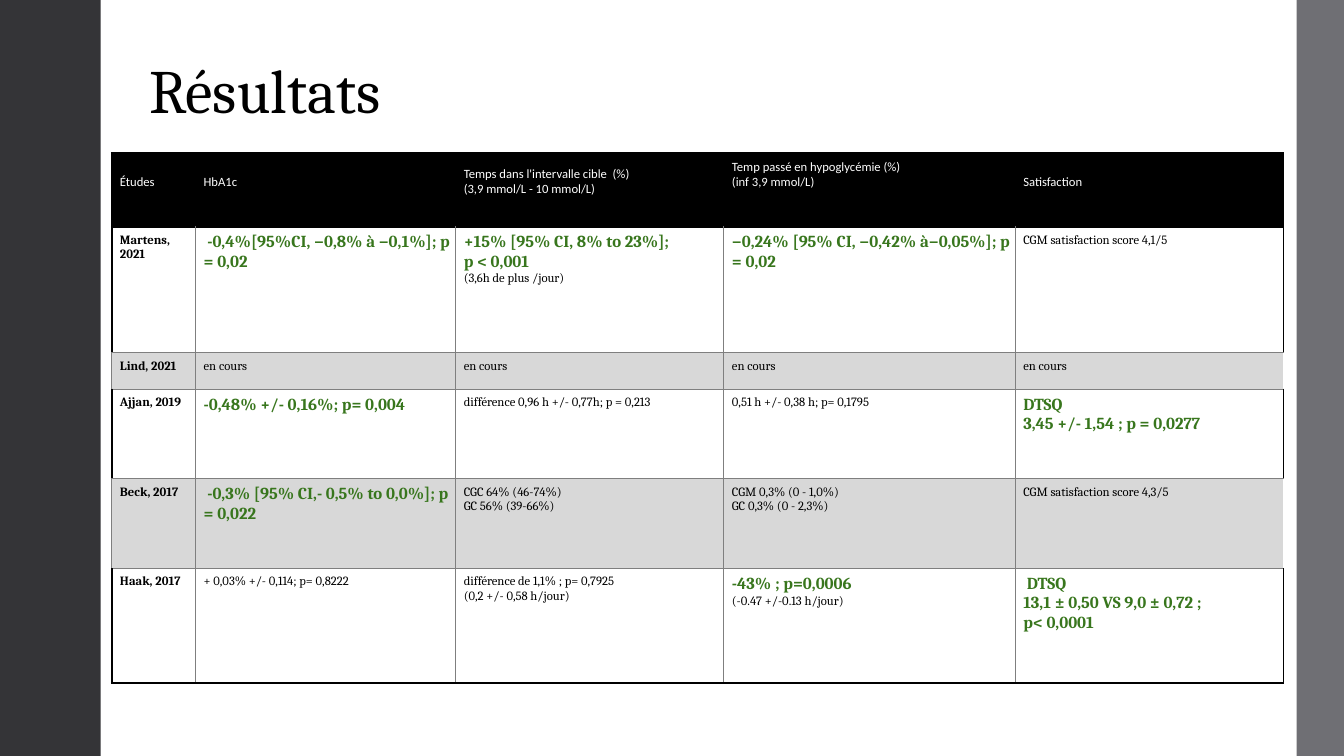
import dataclasses

import lxml.etree
import pptx
import pptx.dml.color
import pptx.enum.shapes
import pptx.enum.text
import pptx.oxml.ns
import pptx.util


@dataclasses.dataclass(frozen=True)
class Theme:
    """Colours, fonts and type sizes of the slide."""
    black: str = "000000"
    white: str = "FFFFFF"
    dark: str = "343437"
    grey: str = "6F6F74"
    band: str = "D8D8D8"
    rule: str = "7F7F7F"
    green: str = "38761D"
    serif: str = "Cambria"
    sans: str = "Calibri"
    title: int = 44
    key: int = 12
    body: int = 9
    frame: float = 1.5
    hairline: float = 0.75


THEME = Theme()
SLIDE_COLUMNS, SLIDE_ROWS = 13.33, 7.5
TABLE_COLUMNS = [0.83, 2.58, 2.66, 2.89, 2.66]
TABLE_ROWS = [0.73, 1.25, 0.36, 0.89, 0.89, 1.14]
HEADER_BOTTOMS = [0.22, 0.22, 0.22, 0.36, 0.22]
STYLES = {
    "title": (THEME.serif, THEME.title, False, THEME.black),
    "header": (THEME.sans, THEME.body, False, THEME.white),
    "study": (THEME.serif, THEME.body, True, THEME.black),
    "plain": (THEME.serif, THEME.body, False, THEME.black),
    "key": (THEME.serif, THEME.key, True, THEME.green),
}
HEADERS = [
    ["Études"],
    ["HbA1c"],
    ["Temps dans l'intervalle cible  (%)", "(3,9 mmol/L - 10 mmol/L)"],
    ["Temp passé en hypoglycémie (%)", "(inf 3,9 mmol/L)"],
    ["Satisfaction"],
]


def styled(style, *lines):
    """Pair each line with the name of its text style."""
    return [(style, line) for line in lines]


def key(*lines):
    """Return lines that hold a significant result."""
    return styled("key", *lines)


def plain(*lines):
    """Return lines of ordinary text."""
    return styled("plain", *lines)


STUDIES = {
    "Martens, 2021": [
        key(" -0,4%[95%CI, −0,8% à −0,1%]; p = 0,02"),
        key("+15% [95% CI, 8% to 23%];", "p < 0,001") + plain("(3,6h de plus /jour)"),
        key("−0,24% [95% CI, −0,42% à−0,05%]; p = 0,02"),
        plain("CGM satisfaction score 4,1/5"),
    ],
    "Lind, 2021": [plain("en cours")] * 4,
    "Ajjan, 2019": [
        key("-0,48% +/- 0,16%; p= 0,004"),
        plain("différence 0,96 h +/- 0,77h; p = 0,213"),
        plain("0,51 h +/- 0,38 h; p= 0,1795"),
        key("DTSQ", "3,45 +/- 1,54 ; p = 0,0277"),
    ],
    "Beck, 2017": [
        key(" -0,3% [95% CI,- 0,5% to 0,0%]; p = 0,022"),
        plain("CGC 64% (46-74%)", "GC 56% (39-66%)"),
        plain("CGM 0,3% (0 - 1,0%)", "GC 0,3% (0 - 2,3%)"),
        plain("CGM satisfaction score 4,3/5"),
    ],
    "Haak, 2017": [
        plain("+ 0,03% +/- 0,114; p= 0,8222"),
        plain("différence de 1,1% ; p= 0,7925", "(0,2 +/- 0,58 h/jour)"),
        key("-43% ; p=0,0006") + plain("(-0.47 +/-0.13 h/jour)"),
        key(" DTSQ", "13,1 ± 0,50 VS 9,0 ± 0,72 ;", "p< 0,0001"),
    ],
}


def colour(value):
    """Return the colour object for a hex value."""
    return pptx.dml.color.RGBColor.from_string(value)


def grid(*lengths):
    """Turn counts of slide columns or rows into lengths."""
    return [pptx.util.Inches(length) for length in lengths]


def set_format(target, values):
    """Set every attribute named in a dict of format values."""
    for name, value in values.items():
        setattr(target, name, value)


def write_lines(text_frame, lines, spacing=1.0):
    """Write one paragraph for each pair of style and text."""
    for index, (style, text) in enumerate(lines):
        paragraph = text_frame.add_paragraph() if index else text_frame.paragraphs[0]
        paragraph.line_spacing = spacing
        run = paragraph.add_run()
        run.text = text
        name, size, bold, value = STYLES[style]
        set_format(run.font, {"name": name, "size": pptx.util.Pt(size), "bold": bold})
        run.font.color.rgb = colour(value)


def add_bar(slide, left, width, value):
    """Add a full-height side bar."""
    rectangle = pptx.enum.shapes.MSO_SHAPE.RECTANGLE
    shape = slide.shapes.add_shape(rectangle, *grid(left, 0, width, SLIDE_ROWS))
    shape.shadow.inherit = False
    shape.fill.solid()
    shape.fill.fore_color.rgb = colour(value)
    shape.line.fill.background()


def add_title(slide, text):
    """Add the slide title, standing on the bottom of its box."""
    text_frame = slide.shapes.add_textbox(*grid(1.38, -0.14, 10.78, 1.45)).text_frame
    anchor = pptx.enum.text.MSO_ANCHOR.BOTTOM
    set_format(text_frame, {"word_wrap": True, "vertical_anchor": anchor})
    write_lines(text_frame, styled("title", text), 0.9)


def set_borders(cell, borders):
    """Draw each side of a cell as a (colour, width) pair, or not at all."""
    properties = cell._tc.get_or_add_tcPr()
    qualified = pptx.oxml.ns.qn
    for index, side in enumerate("LRTB"):
        line = lxml.etree.Element(qualified(f"a:ln{side}"))
        properties.insert(index, line)
        if borders[side] is None:
            lxml.etree.SubElement(line, qualified("a:noFill"))
            continue
        value, width = borders[side]
        line.set("w", str(pptx.util.Pt(width)))
        fill = lxml.etree.SubElement(line, qualified("a:solidFill"))
        lxml.etree.SubElement(fill, qualified("a:srgbClr"), val=value)


def cell_borders(row, column):
    """Frame white rows in black and leave grey rows open on the right."""
    frame, hairline = (THEME.black, THEME.frame), (THEME.rule, THEME.hairline)
    if row == 0:
        return dict.fromkeys("LRTB", frame)
    banded = row % 2 == 0
    last_column = column == len(TABLE_COLUMNS) - 1
    return {
        "L": frame if column == 0 and not banded else hairline,
        "R": (None if banded else frame) if last_column else hairline,
        "T": frame if row == 1 else hairline,
        "B": frame if row == len(TABLE_ROWS) - 1 else hairline,
    }


def fill_cell(cell, row, column, lines):
    """Write and format one table cell."""
    anchors = pptx.enum.text.MSO_ANCHOR
    bottom = 0.06 if row else HEADER_BOTTOMS[column]
    sides = ("margin_left", "margin_top", "margin_right", "margin_bottom")
    set_format(cell, dict(zip(sides, grid(0.08, 0.06, 0.01, bottom))))
    cell.vertical_anchor = anchors.TOP if row else anchors.MIDDLE
    write_lines(cell.text_frame, lines)
    cell.fill.solid()
    body = THEME.white if row % 2 else THEME.band
    cell.fill.fore_color.rgb = colour(body if row else THEME.black)
    set_borders(cell, cell_borders(row, column))


def add_results(slide):
    """Add the table of study results."""
    rows = [[styled("header", *lines) for lines in HEADERS]]
    rows += [[styled("study", study)] + results for study, results in STUDIES.items()]
    size = (sum(TABLE_COLUMNS), sum(TABLE_ROWS))
    frame = slide.shapes.add_table(len(rows), len(HEADERS), *grid(1.11, 1.52, *size))
    table = frame.table
    set_format(table, {"first_row": False, "horz_banding": False})
    for column, width in zip(table.columns, grid(*TABLE_COLUMNS)):
        column.width = width
    for row, height in zip(table.rows, grid(*TABLE_ROWS)):
        row.height = height
    for row, cells in enumerate(rows):
        for column, lines in enumerate(cells):
            fill_cell(table.cell(row, column), row, column, lines)


def main():
    """Build and save the results slide."""
    presentation = pptx.Presentation()
    width, height = grid(SLIDE_COLUMNS, SLIDE_ROWS)
    set_format(presentation, {"slide_width": width, "slide_height": height})
    slide = presentation.slides.add_slide(presentation.slide_layouts[6])
    add_title(slide, "Résultats")
    add_bar(slide, 0, 1, THEME.dark)
    add_bar(slide, 12.86, SLIDE_COLUMNS - 12.86, THEME.grey)
    add_results(slide)
    presentation.save("out.pptx")


if __name__ == "__main__":
    main()
